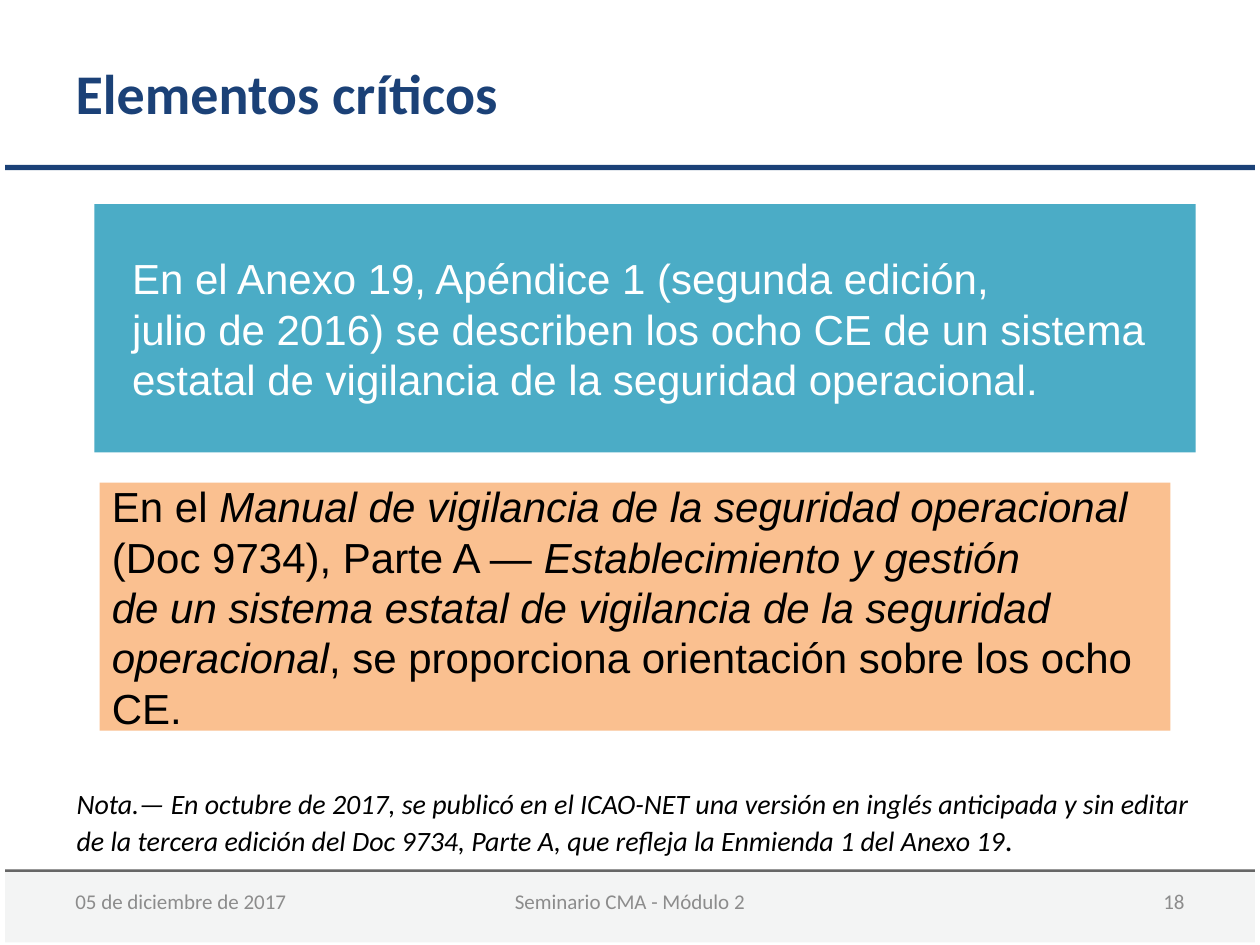
from pptx import Presentation
from pptx.dml.color import RGBColor
from pptx.enum.shapes import MSO_SHAPE
from pptx.enum.text import MSO_ANCHOR, PP_ALIGN
from pptx.util import Inches, Pt

RECTANGLE = MSO_SHAPE.RECTANGLE
TOP, MIDDLE = MSO_ANCHOR.TOP, MSO_ANCHOR.MIDDLE
LEFT, CENTER, RIGHT = PP_ALIGN.LEFT, PP_ALIGN.CENTER, PP_ALIGN.RIGHT

WIDTH, HEIGHT = 10, 7.5
EDGE = 0.04
MARGIN = 0.5
COLORS = {
    "navy": "1B4177", "teal": "4BACC6", "orange": "FAC090",
    "band": "F3F4F4", "rule": "666666", "footer": "8C8C8C",
    "white": "FFFFFF", "black": "000000",
}


def color(name):
    return RGBColor.from_string(COLORS[name])


def write_text(shape, paragraphs, size=24, font="Arial", ink="black", bold=False,
               align=LEFT, anchor=MIDDLE, indent=0):
    """Each paragraph is a list of (text, format) spans; format may hold italic and size."""
    frame = shape.text_frame
    frame.word_wrap = True
    frame.vertical_anchor = anchor
    for number, spans in enumerate(paragraphs):
        para = frame.add_paragraph() if number else frame.paragraphs[0]
        para.alignment = align
        if indent:
            properties = para._p.get_or_add_pPr()
            properties.set("marL", str(Inches(indent)))
            properties.set("indent", "0")
        for text, style in spans:
            span = para.add_run()
            span.text = text
            span.font.name = font
            span.font.size = Pt(style.get("size", size))
            span.font.bold = bold
            span.font.italic = style.get("italic", False)
            span.font.color.rgb = color(ink)


def add_block(slide, left, top, width, height, fill):
    block = slide.shapes.add_shape(
        RECTANGLE, Inches(left), Inches(top), Inches(width), Inches(height))
    block.shadow.inherit = False
    block.fill.solid()
    block.fill.fore_color.rgb = color(fill)
    block.line.fill.background()
    return block


def add_text(slide, left, top, width, height, paragraphs, **style):
    box = slide.shapes.add_textbox(
        Inches(left), Inches(top), Inches(width), Inches(height))
    write_text(box, paragraphs, **style)


def add_title(slide, text):
    title = slide.shapes.title
    title.left, title.top = Inches(MARGIN), Inches(0.11)
    title.width, title.height = Inches(WIDTH - 2 * MARGIN), Inches(1.25)
    write_text(title, [[(text, {})]], size=32, font="Calibri", ink="navy", bold=True)


def add_footer(slide, entries):
    for text, left, width, align in entries:
        add_text(slide, left, 6.95, width, 0.4, [[(text, {})]],
                 size=12, font="Calibri", ink="footer", align=align)


def main():
    deck = Presentation()
    deck.slide_width, deck.slide_height = Inches(WIDTH), Inches(HEIGHT)
    slide = deck.slides.add_slide(deck.slide_layouts[5])
    italic = {"italic": True}

    # Footer band and rules
    for top, height, fill in ((6.9, 0.58, "band"), (6.9, 0.02, "rule"), (1.31, 0.04, "navy")):
        add_block(slide, EDGE, top, WIDTH - 2 * EDGE, height, fill)

    add_title(slide, "Elementos críticos")

    # Annex and manual panels
    annex = add_block(slide, 0.75, 1.62, 8.74, 1.97, "teal")
    write_text(annex, [
        [("En el Anexo 19, Apéndice 1 (segunda edición,", {})],
        [("julio de 2016) se describen los ocho CE de un sistema estatal "
          "de vigilancia de la seguridad operacional.", {})],
    ], ink="white", indent=0.2)

    manual = add_block(slide, 0.79, 3.83, 8.5, 1.97, "orange")
    write_text(manual, [
        [("En el ", {}),
         ("Manual de vigilancia de la seguridad operacional ", italic),
         ("(Doc 9734), Parte A — ", {}),
         ("Establecimiento y gestión", italic)],
        [("de un sistema estatal de vigilancia de la seguridad operacional", italic),
         (", se proporciona orientación sobre los ocho CE.", {})],
    ])

    # Note
    add_text(slide, 0.51, 6.19, 9.13, 0.67, [[
        ("Nota.— En octubre de 2017, se publicó en el ICAO-NET una versión en inglés "
         "anticipada y sin editar de la tercera edición del Doc 9734, Parte A, "
         "que refleja la Enmienda 1 del Anexo 19", italic),
        (".", {"italic": True, "size": 18}),
    ]], size=16, font="Calibri", anchor=TOP)

    # Footer: date, event and page number
    side = 2.33
    add_footer(slide, (
        ("05 de diciembre de 2017", MARGIN, side, LEFT),
        ("Seminario CMA - Módulo 2", (WIDTH - 3.17) / 2, 3.17, CENTER),
        ("18", WIDTH - MARGIN - side, side, RIGHT),
    ))

    deck.save("out.pptx")


if __name__ == "__main__":
    main()
